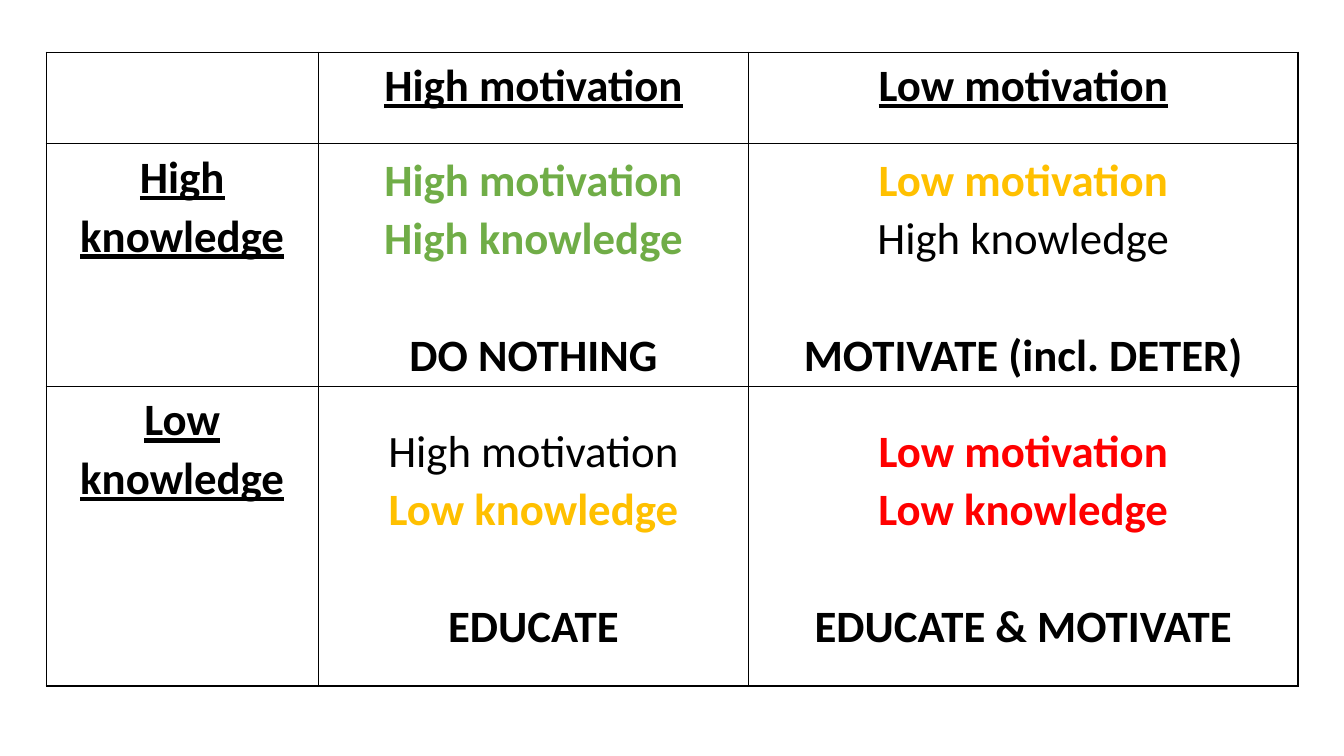
import pptx
import pptx.dml.color
import pptx.enum.text
import pptx.oxml
import pptx.oxml.ns
import pptx.util

Pt = pptx.util.Pt
RGBColor = pptx.dml.color.RGBColor

BLACK = RGBColor(0x00, 0x00, 0x00)
GREEN = RGBColor(0x70, 0xAD, 0x47)
AMBER = RGBColor(0xFF, 0xC0, 0x00)
RED = RGBColor(0xFF, 0x00, 0x00)

COLUMN_WIDTHS = [194.4, 307.4, 392.4]
ROW_HEIGHTS = [65.5, 173.2, 214]
ACTION_GAP = 41.8  # one line of text


def write_line(cell, text, color=BLACK, bold=True, underline=False, space_before=0):
    """Fill the cell's first paragraph, or add one below the text already there."""
    frame = cell.text_frame
    paragraph = frame.add_paragraph() if frame.text else frame.paragraphs[0]
    paragraph.alignment = pptx.enum.text.PP_ALIGN.CENTER
    paragraph.line_spacing = 1.07
    paragraph.space_before = Pt(space_before)
    run = paragraph.add_run()
    run.text = text
    run.font.name = "Calibri"
    run.font.size = Pt(32)
    run.font.bold = bold
    run.font.underline = underline
    run.font.color.rgb = color


def draw_borders(cell):
    properties = cell._tc.get_or_add_tcPr()
    for side in ("lnL", "lnR", "lnT", "lnB"):
        properties.append(pptx.oxml.parse_xml(
            f'<a:{side} {pptx.oxml.ns.nsdecls("a")} w="{Pt(1)}">'
            f'<a:solidFill><a:srgbClr val="{BLACK}"/></a:solidFill></a:{side}>'))


presentation = pptx.Presentation()
presentation.slide_width = Pt(960)
presentation.slide_height = Pt(540)
slide = presentation.slides.add_slide(presentation.slide_layouts[6])

# Empty grid
table = slide.shapes.add_table(
    3, 3, Pt(33), Pt(37.3), Pt(sum(COLUMN_WIDTHS)), Pt(sum(ROW_HEIGHTS))).table
table.first_row = False
table.horz_banding = False
for column, width in zip(table.columns, COLUMN_WIDTHS):
    column.width = Pt(width)
for row, height in zip(table.rows, ROW_HEIGHTS):
    row.height = Pt(height)
for cell in table.iter_cells():
    cell.margin_left = cell.margin_right = Pt(15.8)
    cell.margin_top = Pt(2.2)
    cell.margin_bottom = Pt(0)
    draw_borders(cell)
    cell.fill.background()

# Row and column headings
for index, level in enumerate(("High", "Low"), start=1):
    write_line(table.cell(0, index), f"{level} motivation", underline=True)
    write_line(table.cell(index, 0), f"{level} knowledge", underline=True)

# Quadrants: row, column, (text, color, bold) for each factor, action
quadrants = [
    (1, 1, ("High motivation", GREEN, True), ("High knowledge", GREEN, True),
     "DO NOTHING"),
    (1, 2, ("Low motivation", AMBER, True), ("High knowledge", BLACK, False),
     "MOTIVATE (incl. DETER)"),
    (2, 1, ("High motivation", BLACK, False), ("Low knowledge", AMBER, True),
     "EDUCATE"),
    (2, 2, ("Low motivation", RED, True), ("Low knowledge", RED, True),
     "EDUCATE & MOTIVATE"),
]
for row_index, column_index, motivation, knowledge, action in quadrants:
    cell = table.cell(row_index, column_index)
    cell.vertical_anchor = pptx.enum.text.MSO_ANCHOR.MIDDLE
    for text, color, bold in (motivation, knowledge):
        write_line(cell, text, color=color, bold=bold)
    write_line(cell, action, space_before=ACTION_GAP)

presentation.save("out.pptx")
